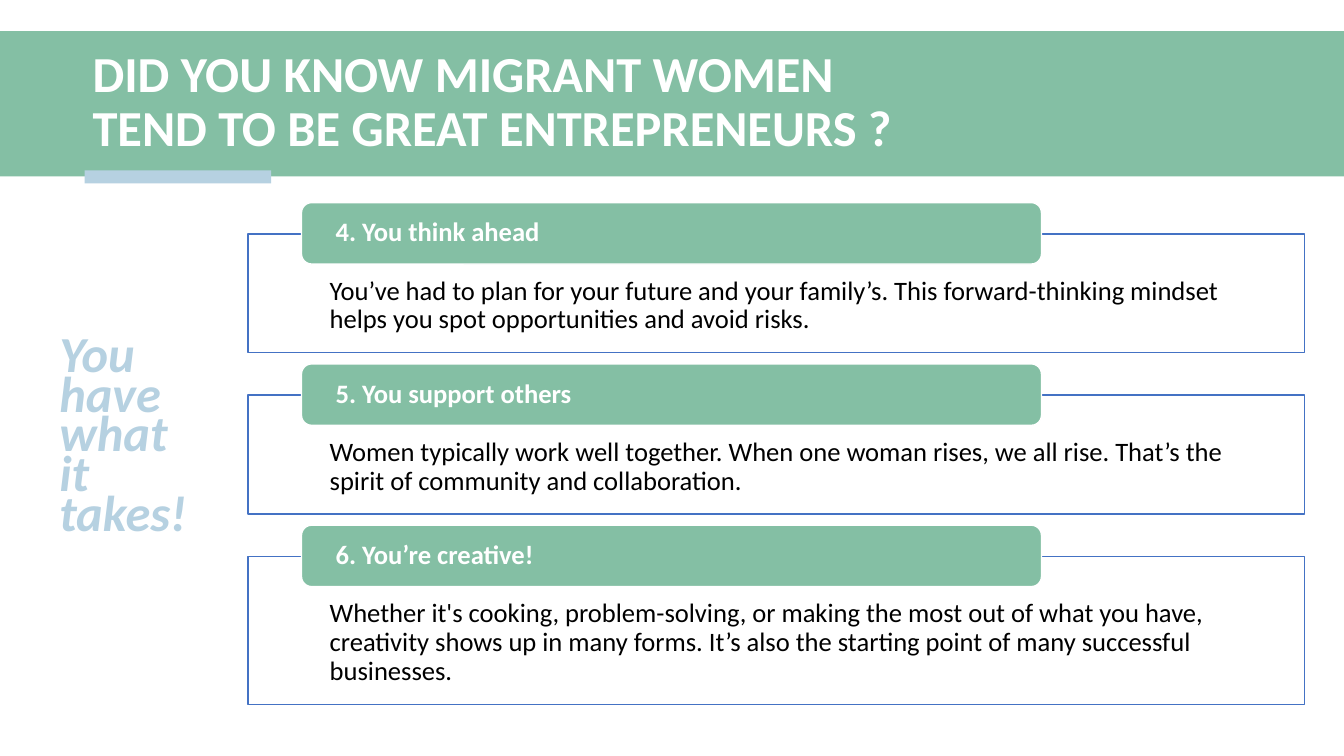
from dataclasses import dataclass

from lxml import etree
from pptx import Presentation
from pptx.dml.color import RGBColor
from pptx.enum.shapes import MSO_SHAPE
from pptx.enum.text import MSO_ANCHOR, PP_ALIGN
from pptx.oxml.ns import qn
from pptx.util import Inches, Pt

RECTANGLE = MSO_SHAPE.RECTANGLE
ROUNDED = MSO_SHAPE.ROUNDED_RECTANGLE
TOP = MSO_ANCHOR.TOP
MIDDLE = MSO_ANCHOR.MIDDLE
LEFT = PP_ALIGN.LEFT


@dataclass(frozen=True)
class Theme:
    font: str = "Calibri"
    green: RGBColor = RGBColor(0x84, 0xBF, 0xA4)
    pale_blue: RGBColor = RGBColor(0xB6, 0xD1, 0xE1)
    blue: RGBColor = RGBColor(0x44, 0x72, 0xC4)
    white: RGBColor = RGBColor(0xFF, 0xFF, 0xFF)
    black: RGBColor = RGBColor(0, 0, 0)
    heading: Pt = Pt(36)
    body: Pt = Pt(19)


THEME = Theme()
DEFAULT_INSETS = (0.1, 0.05, 0.1, 0.05)
CARD_LEFT, CARD_WIDTH, CARD_GAP = 2.46, 10.48, 0.42
FIRST_CARD_TOP = 2.32
TAB_LEFT, TAB_WIDTH, TAB_HEIGHT, TAB_RISE = 2.99, 7.34, 0.61, 0.31

REASONS = [
    ("4. You think ahead", 1.18,
     "You’ve had to plan for your future and your family’s. This forward-thinking "
     "mindset helps you spot opportunities and avoid risks."),
    ("5. You support others", 1.18,
     "Women typically work well together. When one woman rises, we all rise. "
     "That’s the spirit of community and collaboration."),
    ("6. You’re creative!", 1.47,
     "Whether it's cooking, problem-solving, or making the most out of what you have, "
     "creativity shows up in many forms. It’s also the starting point of many "
     "successful businesses."),
]


def apply_format(target, values):
    for name, value in values.items():
        setattr(target, name, value)


def add_block(page, kind, bounds, fill, line=None, opacity=None):
    block = page.shapes.add_shape(kind, *map(Inches, bounds))
    block.shadow.inherit = False
    block.fill.solid()
    block.fill.fore_color.rgb = fill
    if opacity:
        color = block.fill._xPr.find(".//" + qn("a:srgbClr"))
        etree.SubElement(color, qn("a:alpha"), val=str(opacity * 1000))
    if line is None:
        block.line.fill.background()
    else:
        block.line.color.rgb = line
        block.line.width = Pt(1)
    return block


def write_text(box, text, color, font, insets=DEFAULT_INSETS, anchor=TOP, spacing=0.9):
    left, top, right, bottom = map(Inches, insets)
    frame = box.text_frame
    apply_format(frame, {
        "word_wrap": True, "vertical_anchor": anchor,
        "margin_left": left, "margin_top": top,
        "margin_right": right, "margin_bottom": bottom,
    })
    para = frame.paragraphs[0]
    apply_format(para, {"alignment": LEFT, "line_spacing": spacing})
    span = para.add_run()
    span.text = text
    apply_format(span.font, {"name": THEME.font, **font})
    span.font.color.rgb = color


def add_label(page, bounds, text, color, font, **layout):
    box = page.shapes.add_textbox(*map(Inches, bounds))
    write_text(box, text, color, font, **layout)


def add_reason(page, top, height, title, detail):
    card = add_block(page, RECTANGLE, (CARD_LEFT, top, CARD_WIDTH, height),
                     THEME.white, THEME.blue, opacity=90)
    write_text(card, detail, THEME.black, {"size": THEME.body},
               insets=(0.81, 0.43, 0.81, 0.15))
    tab = add_block(page, ROUNDED, (TAB_LEFT, top - TAB_RISE, TAB_WIDTH, TAB_HEIGHT),
                    THEME.green, THEME.white)
    write_text(tab, title, THEME.white, {"size": THEME.body, "bold": True},
               insets=(0.31, 0, 0.31, 0), anchor=MIDDLE)


def main():
    deck = Presentation()
    deck.slide_width, deck.slide_height = Inches(13.33), Inches(7.5)
    page = deck.slides.add_slide(deck.slide_layouts[6])

    add_block(page, RECTANGLE, (0, 0.31, 13.33, 1.44), THEME.green)
    add_block(page, RECTANGLE, (0.84, 1.69, 1.85, 0.13), THEME.pale_blue)
    add_label(page, (0.82, 0.41, 8.66, 1.23),
              "DID YOU KNOW MIGRANT WOMEN TEND TO BE GREAT ENTREPRENEURS ?",
              THEME.white, {"size": THEME.heading, "bold": True}, anchor=MIDDLE)
    add_label(page, (0.49, 3.35, 1.62, 2.06), "You have what it takes!",
              THEME.pale_blue, {"size": THEME.heading, "bold": True, "italic": True},
              spacing=Pt(28.4))

    top = FIRST_CARD_TOP
    for title, height, detail in REASONS:
        add_reason(page, top, height, title, detail)
        top += height + CARD_GAP

    deck.save("out.pptx")


if __name__ == "__main__":
    main()
